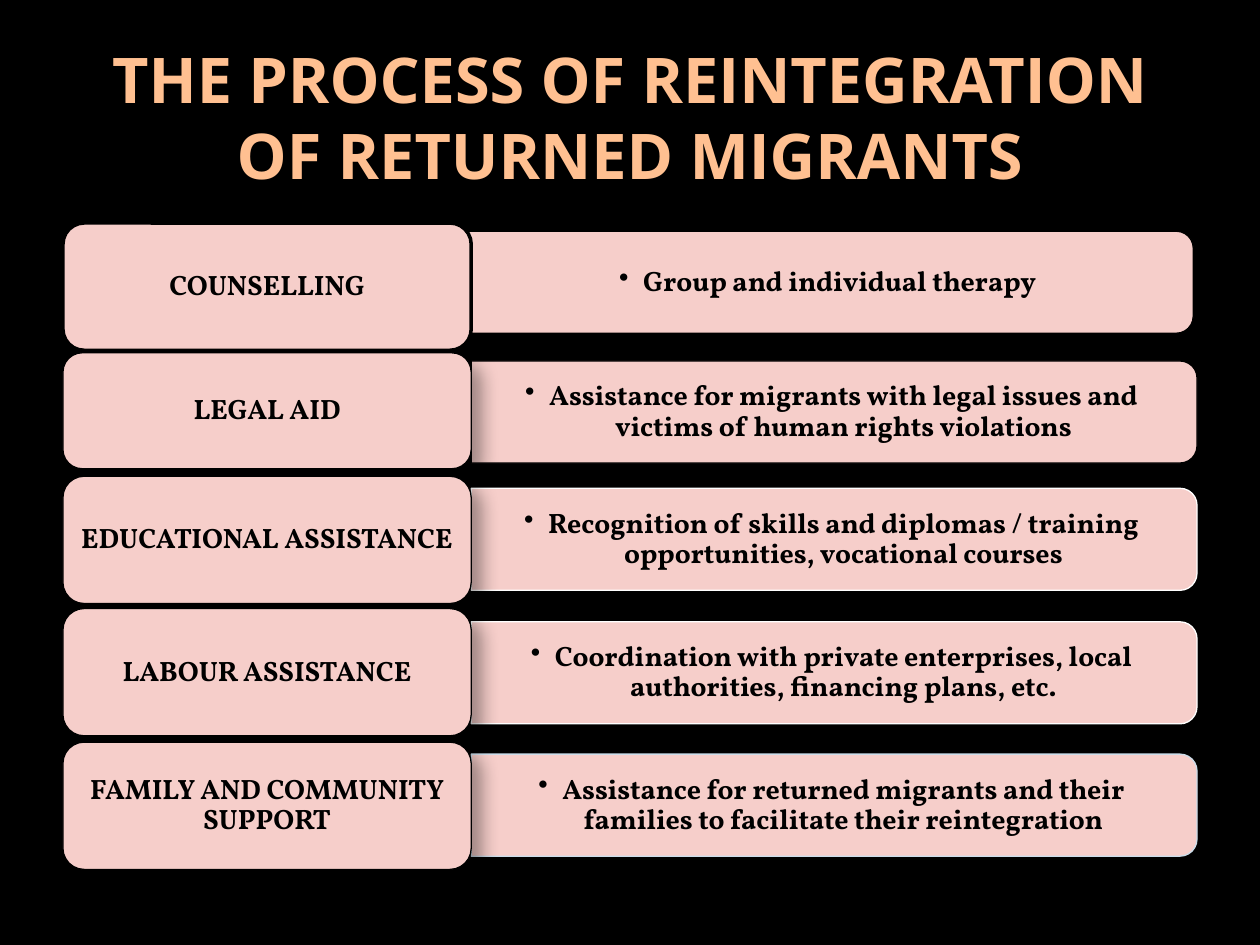
from lxml import etree
from pptx import Presentation
from pptx.dml.color import RGBColor
from pptx.enum.shapes import MSO_SHAPE
from pptx.enum.text import MSO_ANCHOR, PP_ALIGN
from pptx.oxml.ns import qn
from pptx.util import Inches, Pt

ROUND = MSO_SHAPE.ROUNDED_RECTANGLE
ROUND_TOP = MSO_SHAPE.ROUND_2_SAME_RECTANGLE
MIDDLE = MSO_ANCHOR.MIDDLE
CENTER = PP_ALIGN.CENTER

COLORS = {"black": "000000", "white": "FFFFFF", "pink": "F6CECA",
          "peach": "FFC091", "pale": "CCDDEA"}
RGB = {name: RGBColor.from_string(value) for name, value in COLORS.items()}
TITLE = {"name": "Open Sans", "size": Pt(36), "bold": True}
BODY = {"name": "Vollkorn", "size": Pt(16), "bold": True}


def add_box(shape, at, line, line_width=0.75, shadow=None):
    """Add a pink shape; shadow is (alpha %, blur pt, distance pt)."""
    sp = s.shapes.add_shape(shape, *[Inches(v) for v in at])
    sp.fill.solid()
    sp.fill.fore_color.rgb = RGB["pink"]
    sp.line.color.rgb = RGB[line]
    sp.line.width = Pt(line_width)
    sp.shadow.inherit = False
    if shadow:
        alpha, blur, distance = shadow
        effects = sp._element.spPr.find(qn("a:effectLst"))
        outer = etree.SubElement(effects, qn("a:outerShdw"), blurRad=str(Pt(blur)),
                                 dist=str(Pt(distance)), dir="2700000",
                                 algn="ctr", rotWithShape="0")
        color = etree.SubElement(outer, qn("a:srgbClr"), val=COLORS["black"])
        etree.SubElement(color, qn("a:alpha"), val=str(alpha * 1000))
    return sp


def write(sp, text, font, color, spacing, margin_x, margin_y):
    """Write one centred paragraph and return it."""
    tf = sp.text_frame
    frame = {"word_wrap": True, "vertical_anchor": MIDDLE,
             "margin_left": Inches(margin_x), "margin_right": Inches(margin_x),
             "margin_top": Inches(margin_y), "margin_bottom": Inches(margin_y)}
    for key, value in frame.items():
        setattr(tf, key, value)
    p = tf.paragraphs[0]
    p.alignment = CENTER
    p.line_spacing = spacing
    r = p.add_run()
    r.text = text
    for key, value in font.items():
        setattr(r.font, key, value)
    r.font.color.rgb = RGB[color]
    return p


prs = Presentation()
prs.slide_width, prs.slide_height = Inches(10), Inches(7.5)
s = prs.slides.add_slide(prs.slide_layouts[6])
s.background.fill.solid()
s.background.fill.fore_color.rgb = RGB["black"]

# Title
title = s.shapes.add_textbox(Inches(0.5), Inches(0.3), Inches(9), Inches(1.25))
write(title, "THE PROCESS OF REINTEGRATION OF RETURNED MIGRANTS",
      TITLE, "peach", 1.0, 0.1, 0.05)

# Rows: label, label top, label height, detail, bar left, bar middle, bar line
rows = [
    ("COUNSELLING", 1.77, 1.01, "Group and individual therapy", 3.71, 2.24, "black"),
    ("LEGAL AID", 2.8, 0.92,
     "Assistance for migrants with legal issues and victims of human rights violations",
     3.74, 3.27, "black"),
    ("EDUCATIONAL ASSISTANCE", 3.78, 1.01,
     "Recognition of skills and diplomas / training opportunities, vocational courses",
     3.74, 4.28, "white"),
    ("LABOUR ASSISTANCE", 4.83, 1.01,
     "Coordination with private enterprises, local authorities, financing plans, etc.",
     3.74, 5.34, "white"),
    ("FAMILY AND COMMUNITY SUPPORT", 5.89, 1.01,
     "Assistance for returned migrants and their families to facilitate their reintegration",
     3.74, 6.39, "pale"),
]
BAR_W, BAR_H = 5.76, 0.81
TEXT_W, TEXT_H = 5.72, 0.73

for i, (label, top, height, detail, left, middle, line) in enumerate(rows):
    # Detail bar, turned so that its rounded end points right
    bar = add_box(ROUND_TOP, (left + (BAR_W - BAR_H) / 2, middle - BAR_W / 2, BAR_H, BAR_W),
                  line, shadow=(26, 15, 18))
    bar.rotation = 90

    # Bulleted detail text
    box = s.shapes.add_textbox(Inches(left), Inches(middle - TEXT_H / 2),
                               Inches(TEXT_W), Inches(TEXT_H))
    p = write(box, detail, BODY, "black", 0.9, 0.27, 0.14)
    pPr = p._p.get_or_add_pPr()
    pPr.set("marL", str(Inches(0.19)))
    pPr.set("indent", str(Inches(-0.19)))
    etree.SubElement(pPr, qn("a:buChar"), char="•")

    # Label; the first has a heavier line and no shadow
    style = {"shadow": (35, 10.2, 8)} if i else {"line_width": 2}
    sp = add_box(ROUND, (0.5, top, 3.24, height), "black", **style)
    write(sp, label, BODY, "black", 0.9, 0.07, 0.03)

prs.save("out.pptx")
